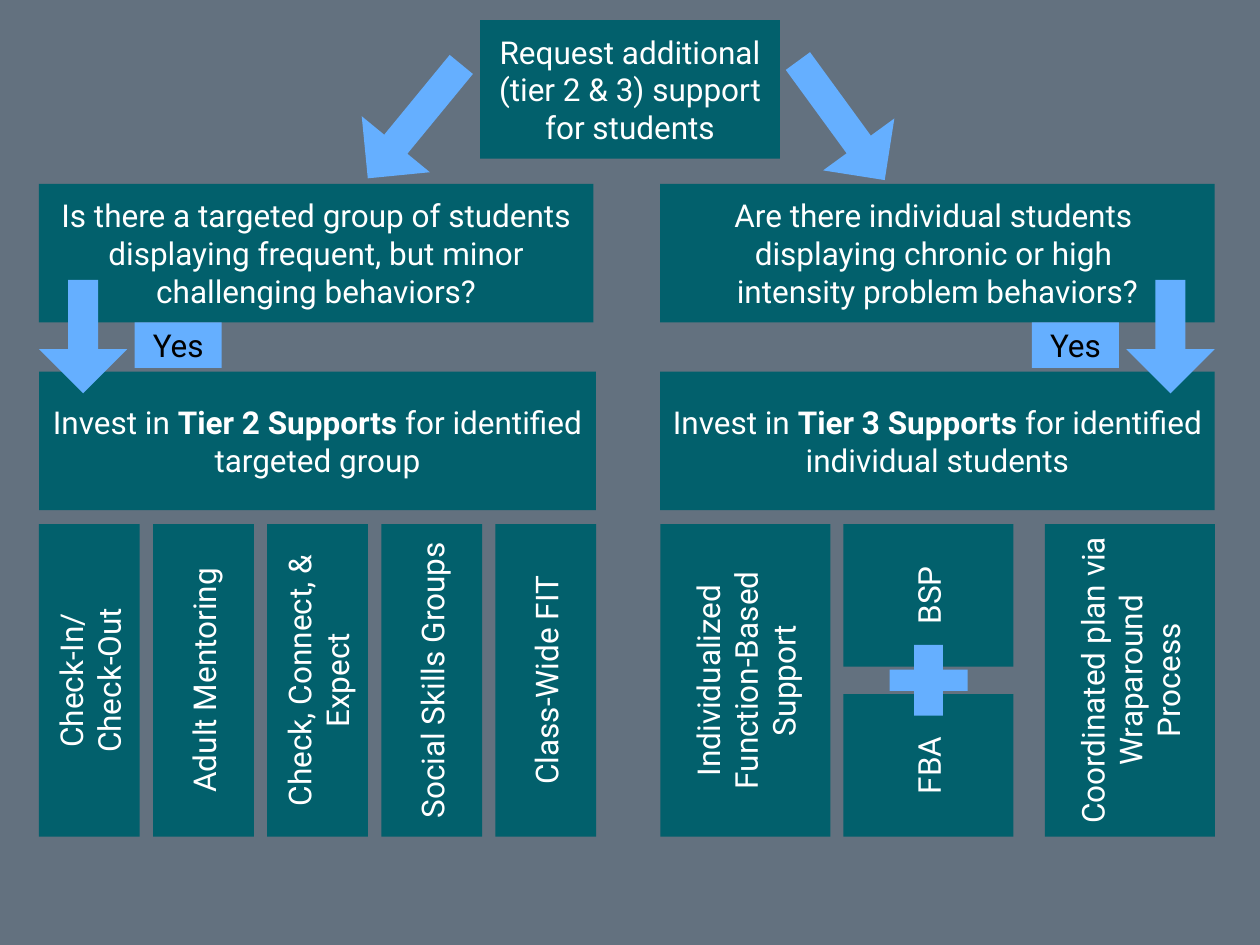
import pptx
import pptx.util
import pptx.dml.color
import pptx.enum.shapes
import pptx.enum.text

Pt = pptx.util.Pt
RGB = pptx.dml.color.RGBColor
SHAPE = pptx.enum.shapes.MSO_SHAPE

SLATE = RGB(0x63, 0x71, 0x7F)
TEAL = RGB(0x02, 0x60, 0x6C)
SKY = RGB(0x65, 0xAF, 0xFF)
WHITE = RGB(0xFF, 0xFF, 0xFF)
BLACK = RGB(0, 0, 0)

FONT = "Roboto"
LEFT, RIGHT = 22.3, 377.3
BRANCH_WIDTH, BOX_HEIGHT = 316.8, 79.2
QUESTION_TOP, INVEST_TOP = 105.1, 212.4
STRATEGY_TOP, STRATEGY_HEIGHT = 299.5, 178.6
TIER2_WIDTH, TIER2_PITCH = 57.6, 65.2
TIER3_WIDTH, HALF_HEIGHT = 97.2, 81.4
ARROW_WIDTH, ARROW_LENGTH = 50.4, 64.8

REQUEST = ["Request additional (tier 2 & 3) support for students"]
QUESTIONS = [
    (LEFT, ["Is there a targeted group of students displaying frequent, "
            "but minor challenging behaviors?"]),
    (RIGHT, ["Are there individual students ", "displaying chronic or high ",
             "intensity problem behaviors?"]),
]
INVESTMENTS = [
    (LEFT, 318.2, ["Invest in ", "Tier 2 Supports ", "for identified targeted group"]),
    (RIGHT, BRANCH_WIDTH, ["Invest in ", "Tier 3 Supports", " for identified individual students"]),
]
TIER2_STRATEGIES = [
    ["Check-In/", "Check-Out"],
    ["Adult Mentoring"],
    ["Check, Connect, & Expect"],
    ["Social Skills Groups"],
    ["Class-Wide FIT"],
]
TIER3_STRATEGIES = [
    (RIGHT, STRATEGY_TOP, STRATEGY_HEIGHT, ["Individualized Function-Based Support"]),
    (481.9, STRATEGY_TOP + STRATEGY_HEIGHT - HALF_HEIGHT, HALF_HEIGHT, ["FBA"]),
    (481.9, STRATEGY_TOP, HALF_HEIGHT, ["BSP"]),
    (597, STRATEGY_TOP, STRATEGY_HEIGHT, ["Coordinated plan via Wraparound Process"]),
]
ARROWS = [
    (211.7, 27.3, 84.2, 39.4),
    (455.6, 26.8, 84.2, 323.9),
    (RIGHT + BRANCH_WIDTH - ARROW_WIDTH, 160, ARROW_LENGTH, 0),
    (LEFT, 160, ARROW_LENGTH, 0),
]
ANSWER_LEFTS = [77, 589.7]

deck = pptx.Presentation()
deck.slide_width, deck.slide_height = Pt(720), Pt(540)
slide = deck.slides.add_slide(deck.slide_layouts[6])
slide.background.fill.solid()
slide.background.fill.fore_color.rgb = SLATE


def add_figure(kind, left, top, width, height, color, adjustments=()):
    figure = slide.shapes.add_shape(kind, Pt(left), Pt(top), Pt(width), Pt(height))
    figure.shadow.inherit = False
    figure.fill.solid()
    figure.fill.fore_color.rgb = color
    figure.line.fill.background()
    for index, value in enumerate(adjustments):
        figure.adjustments[index] = value
    return figure


def add_box(left, top, width, height, paragraphs, color=TEAL, ink=WHITE):
    box = add_figure(SHAPE.RECTANGLE, left, top, width, height, color)
    frame = box.text_frame
    frame.word_wrap = True
    frame.margin_left = frame.margin_right = Pt(6)
    frame.vertical_anchor = pptx.enum.text.MSO_ANCHOR.MIDDLE
    for index, runs in enumerate(paragraphs):
        paragraph = frame.add_paragraph() if index else frame.paragraphs[0]
        paragraph.alignment = pptx.enum.text.PP_ALIGN.CENTER
        for position, text in enumerate(runs):
            run = paragraph.add_run()
            run.text = text
            run.font.name = FONT
            run.font.size = Pt(18)
            run.font.bold = position == 1
            run.font.color.rgb = ink
    return box


def as_paragraphs(lines):
    return [[line] for line in lines]


def add_upright_box(left, top, width, height, lines):
    shift = (height - width) / 2
    box = add_box(left - shift, top + shift, height, width, as_paragraphs(lines))
    box.rotation = 270


for left, lines in QUESTIONS:
    add_box(left, QUESTION_TOP, BRANCH_WIDTH, BOX_HEIGHT, as_paragraphs(lines))
add_box(274.3, 11.5, 171.4, BOX_HEIGHT, as_paragraphs(REQUEST))
for left, width, runs in INVESTMENTS:
    add_box(left, INVEST_TOP, width, BOX_HEIGHT, [runs])

for column, lines in enumerate(TIER2_STRATEGIES):
    add_upright_box(LEFT + column * TIER2_PITCH, STRATEGY_TOP,
                    TIER2_WIDTH, STRATEGY_HEIGHT, lines)
for left, top, height, lines in TIER3_STRATEGIES:
    add_upright_box(left, top, TIER3_WIDTH, height, lines)

add_figure(SHAPE.CROSS, 508.3, 368.6, 44.6, 40.3, SKY, [0.35])
for left, top, length, angle in ARROWS:
    arrow = add_figure(SHAPE.DOWN_ARROW, left, top, ARROW_WIDTH, length, SKY, [0.34, 0.5])
    arrow.rotation = angle
for left in ANSWER_LEFTS:
    add_box(left, 184.3, 49.7, 25.9, [["Yes"]], SKY, BLACK)

deck.save("out.pptx")
